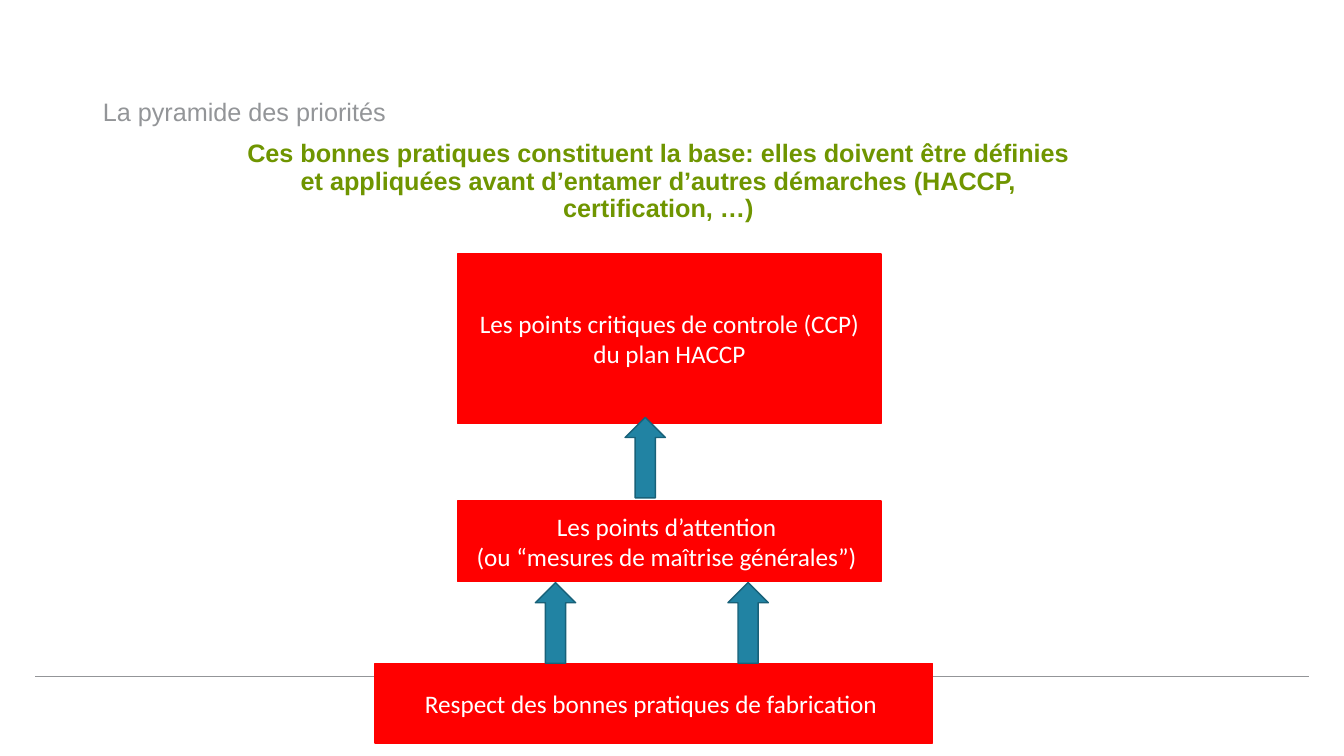
from lxml import etree
from pptx import Presentation
from pptx.dml.color import RGBColor
from pptx.enum.shapes import MSO_CONNECTOR, MSO_SHAPE
from pptx.enum.text import MSO_ANCHOR, MSO_AUTO_SIZE, PP_ALIGN
from pptx.oxml.ns import qn
from pptx.util import Inches, Pt

STRAIGHT = MSO_CONNECTOR.STRAIGHT
RECTANGLE, UP_ARROW = MSO_SHAPE.RECTANGLE, MSO_SHAPE.UP_ARROW
TOP, MIDDLE = MSO_ANCHOR.TOP, MSO_ANCHOR.MIDDLE
LEFT, CENTER = PP_ALIGN.LEFT, PP_ALIGN.CENTER
NO_FIT = MSO_AUTO_SIZE.NONE

GRAY = RGBColor(0x93, 0x95, 0x98)
GREEN = RGBColor(0x6F, 0x95, 0x00)
RED = RGBColor(0xFF, 0x00, 0x00)
WHITE = RGBColor(0xFF, 0xFF, 0xFF)
TEAL = RGBColor(0x21, 0x83, 0xA3)
DARK_TEAL = RGBColor(0x18, 0x61, 0x79)

PAGE_WIDTH, PAGE_HEIGHT = 13.33, 7.5
ARROW_WIDTH, ARROW_HEIGHT = 0.4, 0.8
LEVELS = [
    ((3.72, 6.58, 5.53, 0.79), "Respect des bonnes pratiques de fabrication "),
    ((4.54, 4.97, 4.2, 0.8),
     "Les points d’attention \v(ou “mesures de maîtrise générales”) "),
    ((4.54, 2.52, 4.2, 1.68),
     "Les points critiques de controle (CCP) du plan HACCP"),
]
ARROW_TIPS = [(5.51, 5.78), (7.42, 5.78), (6.4, 4.14)]


def write_text(shape, text, font_name, color, align, anchor, bold=False):
    frame = shape.text_frame
    frame.text = text
    frame.word_wrap = True
    frame.auto_size = NO_FIT
    frame.vertical_anchor = anchor
    para = frame.paragraphs[0]
    para.alignment = align
    para.space_before = Pt(0)
    para.space_after = Pt(10)
    properties = para._p.get_or_add_pPr()
    properties.set("marL", "0")
    properties.set("indent", "0")
    etree.SubElement(properties, qn("a:buNone"))
    para.font.name = font_name
    para.font.size = Pt(18)
    para.font.bold = bold
    para.font.color.rgb = color
    return para


def fill_placeholder(placeholder, box, text, color, align, anchor, bold=False):
    (placeholder.left, placeholder.top,
     placeholder.width, placeholder.height) = map(Inches, box)
    para = write_text(placeholder, text, "Arial", color, align, anchor, bold)
    para.line_spacing = 0.9


def add_rule(page, left, right, top):
    rule = page.shapes.add_connector(
        STRAIGHT, Inches(left), Inches(top), Inches(right), Inches(top))
    rule.line.color.rgb = GRAY
    rule.line.width = Pt(1)
    etree.SubElement(rule._element.spPr, qn("a:effectLst"))


def add_block(page, kind, box, fill, outline):
    block = page.shapes.add_shape(kind, *map(Inches, box))
    block.shadow.inherit = False
    block.fill.solid()
    block.fill.fore_color.rgb = fill
    block.line.color.rgb = outline
    block.line.width = Pt(1)
    return block


def add_pyramid(page):
    for box, text in LEVELS:
        level = add_block(page, RECTANGLE, box, RED, RED)
        write_text(level, text, "Calibri", WHITE, CENTER, MIDDLE)
    for center, top in ARROW_TIPS:
        box = (center - ARROW_WIDTH / 2, top, ARROW_WIDTH, ARROW_HEIGHT)
        add_block(page, UP_ARROW, box, TEAL, DARK_TEAL)


def main():
    deck = Presentation()
    deck.slide_width = Inches(PAGE_WIDTH)
    deck.slide_height = Inches(PAGE_HEIGHT)
    page = deck.slides.add_slide(deck.slide_layouts[1])
    add_rule(page, 0.35, 12.98, 6.71)
    fill_placeholder(page.shapes.title, (0.92, 0.4, 11.5, 1.45),
                     "La pyramide des priorités", GRAY, LEFT, MIDDLE)
    fill_placeholder(page.placeholders[1], (2.35, 1.35, 8.36, 4.56),
                     "Ces bonnes pratiques constituent la base: elles doivent "
                     "être définies et appliquées avant d’entamer d’autres "
                     "démarches (HACCP, certification, …)",
                     GREEN, CENTER, TOP, bold=True)
    add_pyramid(page)
    deck.save("out.pptx")


if __name__ == "__main__":
    main()
